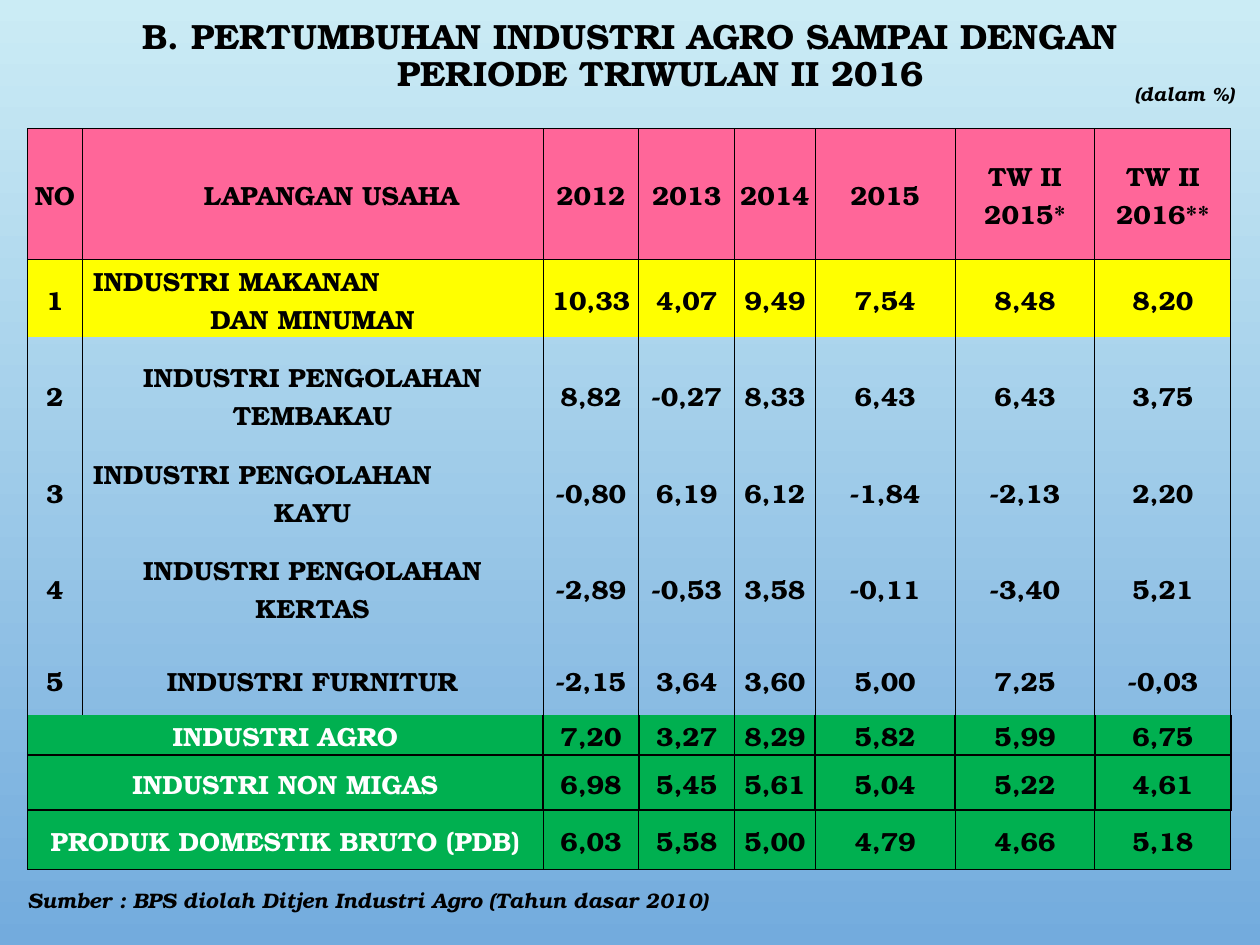
from pptx import Presentation
from pptx.dml.color import RGBColor
from pptx.enum.text import MSO_ANCHOR, PP_ALIGN
from pptx.oxml.ns import qn
from pptx.util import Inches, Pt
from lxml.etree import SubElement

FONT = "TeX Gyre Bonum"
COLORS = {
    "sky": "CBECF5", "blue": "73ABDD", "header": "FF6699", "highlight": "FFFF00",
    "total": "00B050", "text": "000000", "total_text": "FFFFFF",
}
NO_STYLE = "{2D5ABB26-0587-4C30-8999-92F81FD0307C}"
COLUMN_WIDTHS = [0.43, 3.66, 0.76, 0.76, 0.64, 1.11, 1.11, 1.08]
ROW_HEIGHTS = [1.04, 0.61, 0.91, 0.63, 0.9, 0.56, 0.31, 0.44, 0.47]
HEADER = ["NO", "LAPANGAN USAHA", "2012", "2013", "2014", "2015",
          "TW II\n2015*", "TW II 2016**"]
INDUSTRIES = [
    ["INDUSTRI MAKANAN\nDAN MINUMAN", "10,33", "4,07", "9,49", "7,54", "8,48", "8,20"],
    ["INDUSTRI PENGOLAHAN TEMBAKAU", "8,82", "-0,27", "8,33", "6,43", "6,43", "3,75"],
    ["INDUSTRI PENGOLAHAN\nKAYU", "-0,80", "6,19", "6,12", "-1,84", "-2,13", "2,20"],
    ["INDUSTRI PENGOLAHAN KERTAS", "-2,89", "-0,53", "3,58", "-0,11", "-3,40", "5,21"],
    ["INDUSTRI FURNITUR", "-2,15", "3,64", "3,60", "5,00", "7,25", "-0,03"],
]
TOTALS = [
    ["INDUSTRI AGRO", "7,20", "3,27", "8,29", "5,82", "5,99", "6,75"],
    ["INDUSTRI NON MIGAS", "6,98", "5,45", "5,61", "5,04", "5,22", "4,61"],
    ["PRODUK DOMESTIK BRUTO (PDB)", "6,03", "5,58", "5,00", "4,79", "4,66", "5,18"],
]


def rgb(name):
    return RGBColor.from_string(COLORS[name])


def format_runs(paragraph, size, color="text", italic=False):
    for run in paragraph.runs:
        run.font.name = FONT
        run.font.size = Pt(size)
        run.font.bold = True
        run.font.italic = italic
        run.font.color.rgb = rgb(color)


def indent(paragraph, left, first_line=0):
    properties = paragraph._p.get_or_add_pPr()
    properties.set("marL", str(Inches(left)))
    properties.set("indent", str(Inches(first_line)))


def paint_background(slide):
    fill = slide.background.fill
    fill.gradient()
    fill.gradient_angle = 270
    for stop, name in zip(fill.gradient_stops, ("sky", "blue")):
        stop.color.rgb = rgb(name)


def add_title(slide):
    title = slide.shapes.title
    title.left, title.top = Inches(0.5), Inches(-0.08)
    title.width, title.height = Inches(9), Inches(1.06)
    frame = title.text_frame
    frame.text = "B. PERTUMBUHAN INDUSTRI AGRO SAMPAI DENGAN\vPERIODE TRIWULAN II 2016"
    frame.vertical_anchor = MSO_ANCHOR.MIDDLE
    heading = frame.paragraphs[0]
    heading.alignment = PP_ALIGN.CENTER
    heading.line_spacing = 0.9
    indent(heading, 0.49, -0.49)
    format_runs(heading, 20)


def add_caption(slide, text, left, top, width, height, size, spacing=None):
    frame = slide.shapes.add_textbox(
        Inches(left), Inches(top), Inches(width), Inches(height)).text_frame
    frame.word_wrap = True
    frame.text = text
    frame.vertical_anchor = MSO_ANCHOR.MIDDLE if spacing else MSO_ANCHOR.TOP
    caption = frame.paragraphs[0]
    caption.line_spacing = spacing
    format_runs(caption, size, italic=True)


def set_borders(cell, widths):
    """Draw the sides named in widths (L, R, T, B, in points); clear the others."""
    properties = cell._tc.get_or_add_tcPr()
    for side in "LRTB":
        width = widths.get(side, 0)
        line = SubElement(properties, qn(f"a:ln{side}"), w=str(Pt(width)))
        if width:
            fill = SubElement(line, qn("a:solidFill"))
            SubElement(fill, qn("a:srgbClr"), val=COLORS["text"])
        else:
            SubElement(line, qn("a:noFill"))


def fill_cell(cell, text, borders, fill=None, color="text"):
    set_borders(cell, borders)
    if fill:
        cell.fill.solid()
        cell.fill.fore_color.rgb = rgb(fill)
    else:
        cell.fill.background()
    cell.margin_left = cell.margin_right = cell.margin_top = Inches(0.01)
    cell.margin_bottom = 0
    cell.vertical_anchor = MSO_ANCHOR.MIDDLE
    cell.text_frame.text = text
    for paragraph in cell.text_frame.paragraphs:
        paragraph.alignment = PP_ALIGN.CENTER
        format_runs(paragraph, 15, color)


def row_style(row):
    """Return the fill and the border widths of a table row."""
    sides = {"L": 0.5, "R": 0.5}
    if row == 0:
        return "header", {**sides, "T": 0.5, "B": 0.5}
    if row == 1:
        return "highlight", {**sides, "T": 0.5}
    if row <= len(INDUSTRIES):
        return None, sides
    if row == len(ROW_HEIGHTS) - 1:
        return "total", {**sides, "T": 1, "B": 0.5}
    thick = {"L": 1, "R": 1, "B": 1}
    return "total", thick if row == len(INDUSTRIES) + 1 else {**thick, "T": 1}


def add_growth_table(slide):
    table = slide.shapes.add_table(
        len(ROW_HEIGHTS), len(COLUMN_WIDTHS), Inches(0.22), Inches(1.02),
        Inches(sum(COLUMN_WIDTHS)), Inches(sum(ROW_HEIGHTS))).table
    table.first_row = table.horz_banding = False
    table._tbl.tblPr.find(qn("a:tableStyleId")).text = NO_STYLE
    for column, width in zip(table.columns, COLUMN_WIDTHS):
        column.width = Inches(width)
    for row, height in zip(table.rows, ROW_HEIGHTS):
        row.height = Inches(height)

    numbered = [[str(n), *values] for n, values in enumerate(INDUSTRIES, 1)]
    merged = [[name, "", *values] for name, *values in TOTALS]
    for r, texts in enumerate([HEADER, *numbered, *merged]):
        fill, borders = row_style(r)
        is_total = fill == "total"
        if is_total:
            table.cell(r, 0).merge(table.cell(r, 1))
        for c, text in enumerate(texts):
            color = "total_text" if is_total and c == 0 else "text"
            fill_cell(table.cell(r, c), text, borders, fill, color)

    indent(table.cell(0, 1).text_frame.paragraphs[0], 0.3)
    for r, (name, *_) in enumerate(INDUSTRIES, 1):
        first_line = table.cell(r, 1).text_frame.paragraphs[0]
        if "\n" in name:
            first_line.alignment = PP_ALIGN.LEFT
            indent(first_line, 0.08)


def main():
    presentation = Presentation()
    presentation.slide_width, presentation.slide_height = Inches(10), Inches(7.5)
    slide = presentation.slides.add_slide(presentation.slide_layouts[5])
    paint_background(slide)
    add_title(slide)
    add_growth_table(slide)
    add_caption(slide, "Sumber : BPS diolah Ditjen Industri Agro (Tahun dasar 2010)",
                0.12, 7.03, 5.67, 0.26, 12, spacing=0.8)
    add_caption(slide, "(dalam %)", 8.91, 0.6, 1.25, 0.29, 11)
    presentation.save("out.pptx")


if __name__ == "__main__":
    main()
